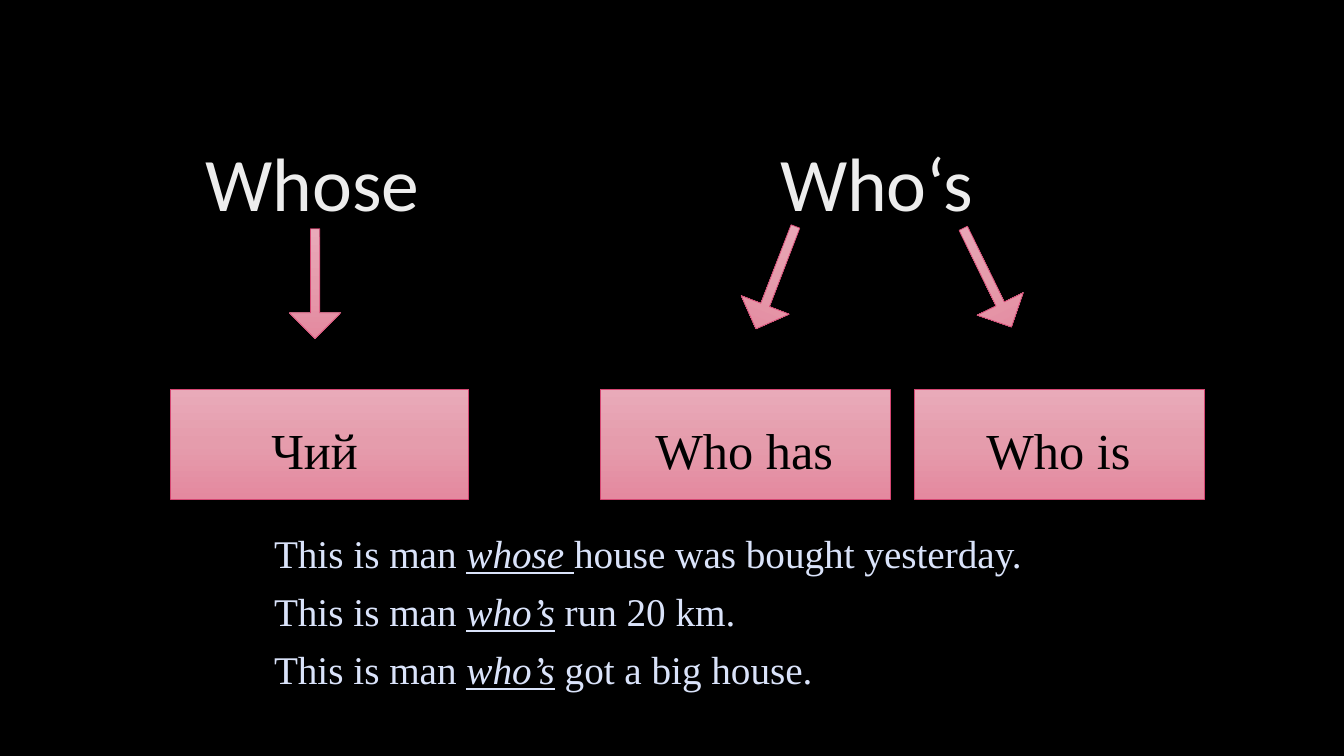
from copy import deepcopy

from pptx import Presentation
from pptx.dml.color import RGBColor
from pptx.enum.shapes import MSO_SHAPE
from pptx.enum.text import MSO_ANCHOR, PP_ALIGN
from pptx.oxml.ns import qn
from pptx.util import Inches, Pt

WIDTH, HEIGHT = Inches(13.333), Inches(7.5)
COLORS = {
    "background": "000000",
    "label": "000000",
    "sentence": "DAE3FA",
    "outline": "D54773",
    "pink_top": "E9AAB9",
    "pink_middle": "E59CAC",
    "pink_bottom": "E4899F",
    "heading_dark": "DEDEDE",
    "heading_middle": "EDEDED",
    "heading_light": "FFFFFF",
}
PINK = [(0, "pink_top"), (0.5, "pink_middle"), (1, "pink_bottom")]
SILVER = [(0, "heading_dark"), (0.28, "heading_middle"), (1, "heading_light")]
SERIF = "Times New Roman"


def color(name):
    """Return the named colour."""
    return RGBColor.from_string(COLORS[name])


def place(left, top, width, height):
    """Turn percentages of the slide into a position and a size."""
    return [round(share * side / 100)
            for share, side in zip((left, top, width, height), (WIDTH, HEIGHT) * 2)]


def apply_gradient(fill, owner, shades, angle):
    """Fill with a linear gradient of three shades."""
    fill.gradient()
    fill.gradient_angle = 360 - angle
    stops = owner.find(".//" + qn("a:gsLst"))
    stops.insert(1, deepcopy(stops[0]))
    for stop, (position, shade) in zip(fill.gradient_stops, shades):
        stop.position = position
        stop.color.rgb = color(shade)


def add_pink_shape(slide, kind, area, rotation=0):
    """Add an outlined pink shape."""
    shape = slide.shapes.add_shape(kind, *place(*area))
    shape.shadow.inherit = False
    shape.rotation = rotation
    apply_gradient(shape.fill, shape._element, PINK, 90)
    shape.line.color.rgb = color("outline")
    shape.line.width = Pt(0.5)
    return shape


def add_arrow(slide, left, top, rotation):
    """Add a slim arrow that points from a heading to a meaning."""
    arrow = add_pink_shape(slide, MSO_SHAPE.DOWN_ARROW, (left, top, 3.83, 14.53), rotation)
    arrow.adjustments[0] = 0.18
    arrow.adjustments[1] = 0.5


def add_frame(slide, area):
    """Add a wrapping text box and return its text frame."""
    frame = slide.shapes.add_textbox(*place(*area)).text_frame
    frame.word_wrap = True
    return frame


def add_run(paragraph, text, size, face):
    """Add a run of text and return it."""
    run = paragraph.add_run()
    run.text = text
    run.font.size = Pt(size)
    run.font.name = face
    return run


def add_heading(slide, text, left):
    """Add a large silver heading."""
    frame = add_frame(slide, (left, 15.07, 20.33, 19.33))
    frame.vertical_anchor = MSO_ANCHOR.MIDDLE
    frame.paragraphs[0].line_spacing = 0.9
    run = add_run(frame.paragraphs[0], text, 54, "Calibri")
    apply_gradient(run.font.fill, run._r, SILVER, 80)


def add_meaning(slide, text, left, width):
    """Add a pink box with its label."""
    add_pink_shape(slide, MSO_SHAPE.RECTANGLE, (left, 51.47, width, 14.53))
    paragraph = add_frame(slide, (left + 1.58, 54.8, 18.3, 9.47)).paragraphs[0]
    paragraph.alignment = PP_ALIGN.CENTER
    add_run(paragraph, text, 36, SERIF).font.color.rgb = color("label")


def add_sentences(slide, sentences):
    """Add example sentences with the middle part emphasised."""
    frame = add_frame(slide, (19.65, 69.33, 66.6, 23.2))
    for row, parts in enumerate(sentences):
        paragraph = frame.add_paragraph() if row else frame.paragraphs[0]
        paragraph.space_after = Pt(8)
        for index, part in enumerate(parts):
            font = add_run(paragraph, part, 28, SERIF).font
            font.color.rgb = color("sentence")
            font.italic = font.underline = index == 1


def main():
    """Build the slide and save it."""
    deck = Presentation()
    deck.slide_width, deck.slide_height = WIDTH, HEIGHT
    slide = deck.slides.add_slide(deck.slide_layouts[6])
    slide.background.fill.solid()
    slide.background.fill.fore_color.rgb = color("background")

    for heading, left in (("Whose", 14.55), ("Who‘s", 57.3)):
        add_heading(slide, heading, left)
    for left, top, rotation in ((21.53, 30.27, 0), (55.8, 29.47, 21.1), (71.55, 29.47, 334)):
        add_arrow(slide, left, top, rotation)
    for meaning, left, width in (("Чий", 12.68, 22.2), ("Who has", 44.64, 21.6),
                                 ("Who is", 68.03, 21.6)):
        add_meaning(slide, meaning, left, width)
    add_sentences(slide, (
        ("This is man ", "whose ", "house was bought yesterday."),
        ("This is man ", "who’s", " run 20 km."),
        ("This is man ", "who’s", " got a big house."),
    ))
    deck.save("out.pptx")


if __name__ == "__main__":
    main()
